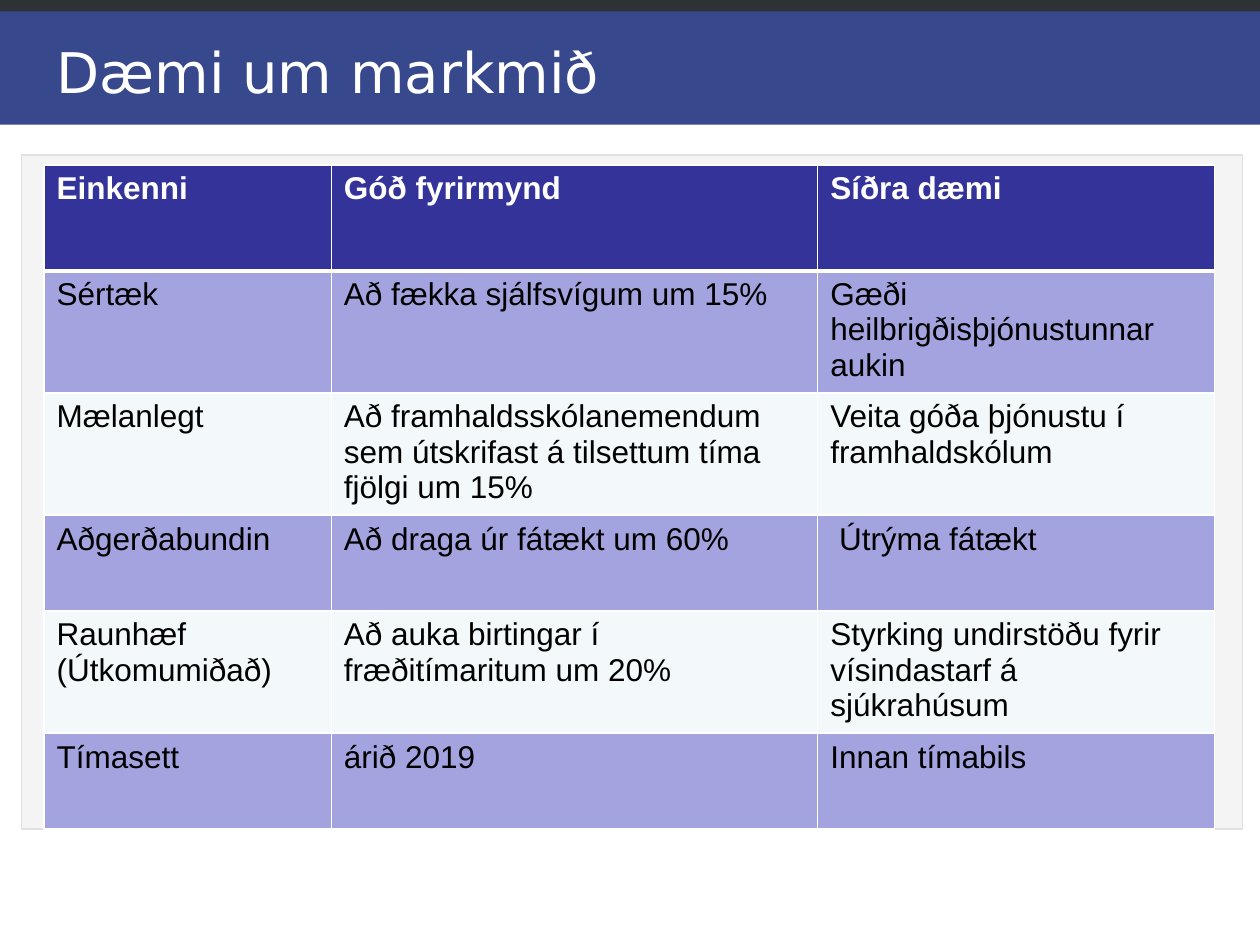
from lxml import etree
from pptx import Presentation
from pptx.dml.color import RGBColor
from pptx.enum import shapes, text
from pptx.oxml.ns import qn
from pptx.util import Pt

WHITE = RGBColor(0xFF, 0xFF, 0xFF)
BLACK = RGBColor(0, 0, 0)
BANNER = RGBColor(0x02, 0x17, 0x6E)
STRIP = RGBColor(0x2E, 0x32, 0x35)
PANEL = RGBColor(0xF4, 0xF4, 0xF4)
PANEL_EDGE = RGBColor(0xE0, 0xE0, 0xE0)
HEADER = RGBColor(0x33, 0x33, 0x99)
BANDS = (RGBColor(0xF3, 0xF9, 0xFA), RGBColor(0xA3, 0xA3, 0xE0))

ROWS = [
    ("Einkenni", "Góð fyrirmynd", "Síðra dæmi"),
    ("Sértæk", "Að fækka sjálfsvígum um 15%",
     "Gæði heilbrigðisþjónustunnar aukin"),
    ("Mælanlegt",
     "Að framhaldsskólanemendum sem útskrifast á tilsettum tíma fjölgi um 15%",
     "Veita góða þjónustu í framhaldskólum"),
    ("Aðgerðabundin", "Að draga úr fátækt um 60%", " Útrýma fátækt"),
    ("Raunhæf (Útkomumiðað)", "Að auka birtingar í fræðitímaritum um 20%",
     "Styrking undirstöðu fyrir vísindastarf á sjúkrahúsum"),
    ("Tímasett", "árið 2019", "Innan tímabils"),
]
COL_SHARES = (2.28, 3.86, 3.15)
ROW_SHARES = (0.84, 0.97, 0.97, 0.76, 0.97, 0.76)


def add_rect(slide, box, fill, line=None, alpha=None):
    """Add a flat rectangle, optionally outlined or translucent."""
    sp = slide.shapes.add_shape(shapes.MSO_SHAPE.RECTANGLE, *map(Pt, box))
    sp.shadow.inherit = False
    sp.fill.solid()
    sp.fill.fore_color.rgb = fill
    if alpha is not None:
        color = sp.fill._xPr.find(qn("a:solidFill"))[0]
        etree.SubElement(color, qn("a:alpha"), val=str(alpha * 1000))
    if line is None:
        sp.line.fill.background()
    else:
        sp.line.color.rgb = line
        sp.line.width = Pt(0.75)
    return sp


def style_text(tf, size, font, color, bold=False):
    """Format every run of a text frame."""
    for p in tf.paragraphs:
        for r in p.runs:
            r.font.size = Pt(size)
            r.font.name = font
            r.font.bold = bold
            r.font.color.rgb = color


def add_banner(slide, box, title):
    """Add the translucent banner with its dark strip and title."""
    x, y, w, h = box
    add_rect(slide, box, BANNER, alpha=79)
    add_rect(slide, (x, y, w, 6.5), STRIP)
    sp = slide.shapes.add_textbox(Pt(x + 25.2), Pt(y + 15.1), Pt(w - 72), Pt(51.1))
    tf = sp.text_frame
    tf.word_wrap = True
    tf.vertical_anchor = text.MSO_ANCHOR.MIDDLE
    tf.text = title
    style_text(tf, 32, "DejaVu Sans", WHITE)


def add_borders(cell, **widths):
    """Give a cell white borders of the given widths in points."""
    tc_pr = cell._tc.get_or_add_tcPr()
    for side in "LRTB":
        ln = etree.SubElement(tc_pr, qn(f"a:ln{side}"), w=str(Pt(widths.get(side, 1))))
        fill = etree.SubElement(ln, qn("a:solidFill"))
        etree.SubElement(fill, qn("a:srgbClr"), val=str(WHITE))


def add_goal_table(slide, box):
    """Add the table of goal traits with banded rows."""
    x, y, w, h = box
    frame = slide.shapes.add_table(len(ROWS), len(COL_SHARES), *map(Pt, box))
    table = frame.table
    for col, share in zip(table.columns, COL_SHARES):
        col.width = Pt(w * share / sum(COL_SHARES))
    for row, share in zip(table.rows, ROW_SHARES):
        row.height = Pt(h * share / sum(ROW_SHARES))
    for i, values in enumerate(ROWS):
        head = i == 0
        widths = {"B": 3} if head else {"T": 3} if i == 1 else {}
        for cell, value in zip(table.rows[i].cells, values):
            add_borders(cell, **widths)
            cell.fill.solid()
            cell.fill.fore_color.rgb = HEADER if head else BANDS[i % 2]
            cell.text_frame.text = value
            style_text(cell.text_frame, 18, "Arial", WHITE if head else BLACK, head)


def add_content(slide, box):
    """Add the grey panel and the table that lies on it."""
    x, y, w, h = box
    add_rect(slide, box, PANEL, line=PANEL_EDGE)
    add_goal_table(slide, (x + 13, y + 5.8, 668.9, h - 5.8))


def main():
    """Build the slide and save it."""
    prs = Presentation()
    prs.slide_width, prs.slide_height = Pt(720), Pt(540)
    slide = prs.slides.add_slide(prs.slide_layouts[6])
    add_content(slide, (12.2, 88.5, 697.7, 385.2))
    add_banner(slide, (0, 0, 720, 71.3), "Dæmi um markmið")
    prs.save("out.pptx")


if __name__ == "__main__":
    main()
